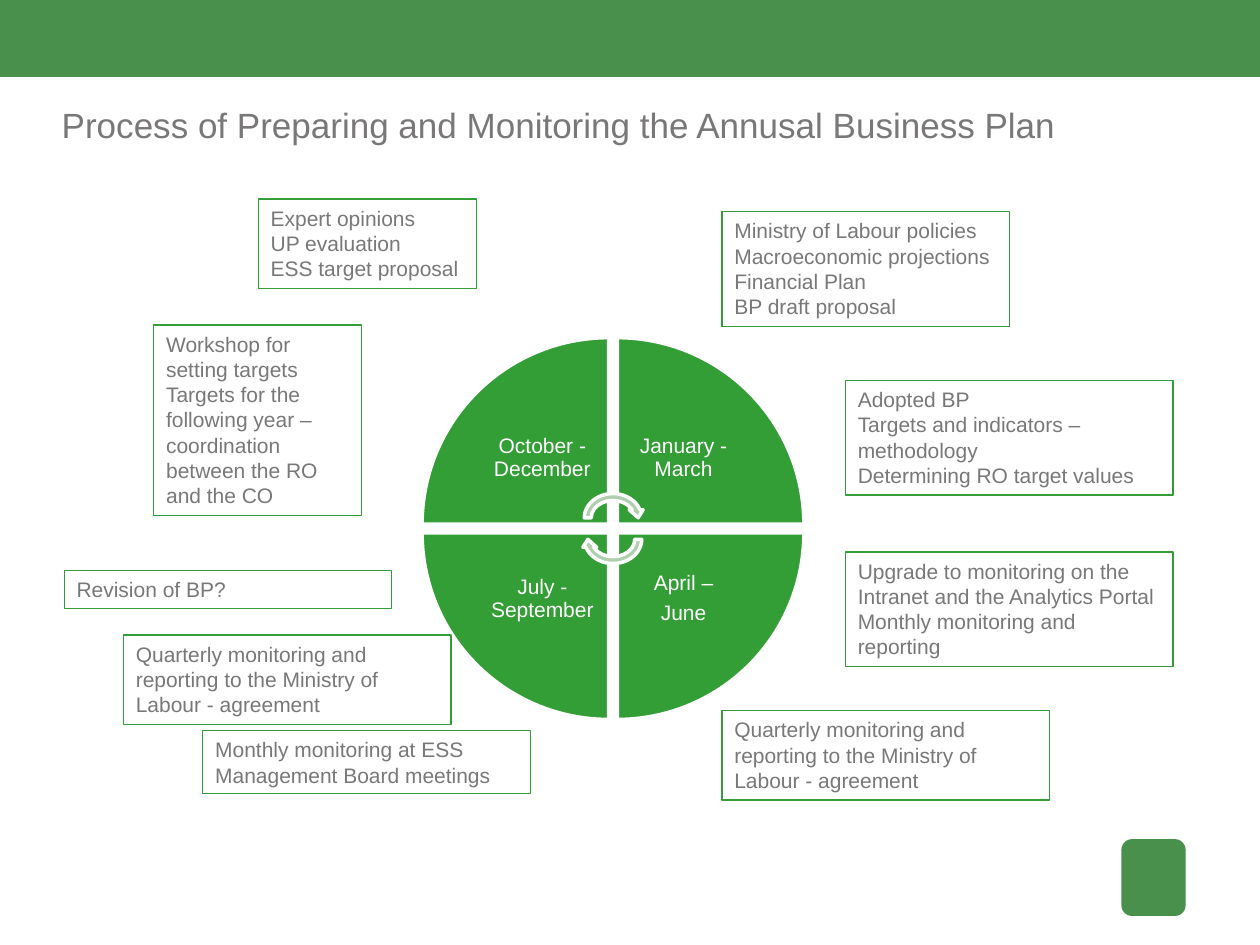
from dataclasses import dataclass

from pptx import Presentation
from pptx.dml.color import RGBColor
from pptx.enum.shapes import MSO_SHAPE
from pptx.enum.text import MSO_ANCHOR, MSO_AUTO_SIZE, PP_ALIGN
from pptx.util import Inches, Pt


@dataclass(frozen=True)
class Theme:
    band: RGBColor = RGBColor.from_string("49904D")
    green: RGBColor = RGBColor.from_string("339E35")
    pale: RGBColor = RGBColor.from_string("B1CFAE")
    text: RGBColor = RGBColor.from_string("797777")
    white: RGBColor = RGBColor.from_string("FFFFFF")
    font: str = "Arial"
    title_size: Pt = Pt(20)
    body_size: Pt = Pt(12)
    thin: Pt = Pt(0.75)
    thick: Pt = Pt(2)


THEME = Theme()

QUARTERS = [
    (["October - December"], 0, 0),
    (["January - March"], 1, 0),
    (["April –", "June"], 1, 1),
    (["July - September"], 0, 1),
]

QUARTERLY = ["Quarterly monitoring and reporting to the Ministry of Labour - agreement"]
NOTES = [
    ((1.22, 2.58, 1.65, 1.51), [
        "Workshop for setting targets",
        "Targets for the following year – coordination between the RO and the CO",
    ]),
    ((2.05, 1.58, 1.73, 0.71), ["Expert opinions", "UP evaluation", "ESS target proposal"]),
    ((5.73, 1.68, 2.28, 0.91), [
        "Ministry of Labour policies",
        "Macroeconomic projections",
        "Financial Plan",
        "BP draft proposal",
    ]),
    ((6.71, 3.02, 2.6, 0.91), [
        "Adopted BP",
        "Targets and indicators – methodology",
        "Determining RO target values",
    ]),
    ((6.71, 4.38, 2.6, 0.91), [
        "Upgrade to monitoring on the Intranet and the Analytics Portal",
        "Monthly monitoring and reporting",
    ]),
    ((5.73, 5.64, 2.6, 0.71), QUARTERLY),
    ((0.51, 4.53, 2.6, 0.3), ["Revision of BP?"]),
    ((0.98, 5.04, 2.6, 0.71), QUARTERLY),
    ((1.61, 5.8, 2.6, 0.5), ["Monthly monitoring at ESS Management Board meetings"]),
]


def set_attrs(obj, values):
    for name, value in values.items():
        setattr(obj, name, value)


def add_shape(s, kind, box, fill=None, line=None, width=None, rotation=0):
    sp = s.shapes.add_shape(kind, *map(Inches, box))
    sp.shadow.inherit = False
    sp.rotation = rotation
    if fill is None:
        sp.fill.background()
    else:
        sp.fill.solid()
        sp.fill.fore_color.rgb = fill
    if line is None:
        sp.line.fill.background()
    else:
        sp.line.color.rgb = line
        sp.line.width = width
    return sp


def write(tf, lines, size, color, frame, para):
    set_attrs(tf, {"word_wrap": True, **frame})
    for i, line in enumerate(lines):
        p = tf.add_paragraph() if i else tf.paragraphs[0]
        set_attrs(p, para)
        r = p.add_run()
        r.text = line
        set_attrs(r.font, {"name": THEME.font, "size": size})
        r.font.color.rgb = color


def margins(inset):
    sides = ("left", "top", "right", "bottom")
    return {f"margin_{side}": Inches(inset) for side in sides}


def add_title(s, box, text):
    sp = s.shapes.add_textbox(*map(Inches, box))
    write(sp.text_frame, [text], THEME.title_size, THEME.text,
          margins(0), {"alignment": PP_ALIGN.LEFT})


def add_cycle(s, box):
    left, top, width, height = box
    wedge, label, gap = 1.48, 1.05, 0.07
    mid_x, mid_y = left + width / 2, top + height / 2
    frame = {"vertical_anchor": MSO_ANCHOR.MIDDLE, **margins(0.09)}
    para = {"alignment": PP_ALIGN.CENTER, "line_spacing": 0.9, "space_after": Pt(4.2)}
    for i, (lines, col, row) in enumerate(QUARTERS):
        x = left + col * (wedge + gap)
        y = top + row * (wedge + gap)
        add_shape(s, MSO_SHAPE.PIE_WEDGE, (x, y, wedge, wedge),
                  THEME.green, THEME.white, THEME.thick, 90 * i)
        inset_x = (1 - col) * (wedge - label)
        inset_y = (1 - row) * (wedge - label)
        sp = s.shapes.add_textbox(
            *map(Inches, (x + inset_x, y + inset_y, label, label)))
        write(sp.text_frame, lines, THEME.body_size, THEME.white, frame, para)
    arrow_w, arrow_h = 0.51, 0.44
    for dy, rotation in ((-0.085, 0), (0.085, 180)):
        arrow = (mid_x - arrow_w / 2, mid_y + dy - arrow_h / 2, arrow_w, arrow_h)
        add_shape(s, MSO_SHAPE.CIRCULAR_ARROW, arrow,
                  THEME.pale, THEME.white, THEME.thick, rotation)


def add_note(s, box, lines):
    sp = add_shape(s, MSO_SHAPE.RECTANGLE, box, line=THEME.green, width=THEME.thin)
    frame = {"vertical_anchor": MSO_ANCHOR.TOP,
             "auto_size": MSO_AUTO_SIZE.SHAPE_TO_FIT_TEXT}
    write(sp.text_frame, lines, THEME.body_size, THEME.text,
          frame, {"alignment": PP_ALIGN.LEFT})


def main():
    prs = Presentation()
    set_attrs(prs, {"slide_width": Inches(10), "slide_height": Inches(7.5)})
    s = prs.slides.add_slide(prs.slide_layouts[6])
    add_shape(s, MSO_SHAPE.RECTANGLE, (0, -0.01, 10, 0.62), THEME.band)
    add_shape(s, MSO_SHAPE.ROUNDED_RECTANGLE, (8.9, 6.66, 0.51, 0.61), THEME.band)
    add_title(s, (0.49, 0.82, 9.26, 0.71),
              "Process of Preparing and Monitoring the Annusal Business Plan")
    add_cycle(s, (3.35, 2.68, 3.03, 3.03))
    for box, lines in NOTES:
        add_note(s, box, lines)
    prs.save("out.pptx")


if __name__ == "__main__":
    main()
